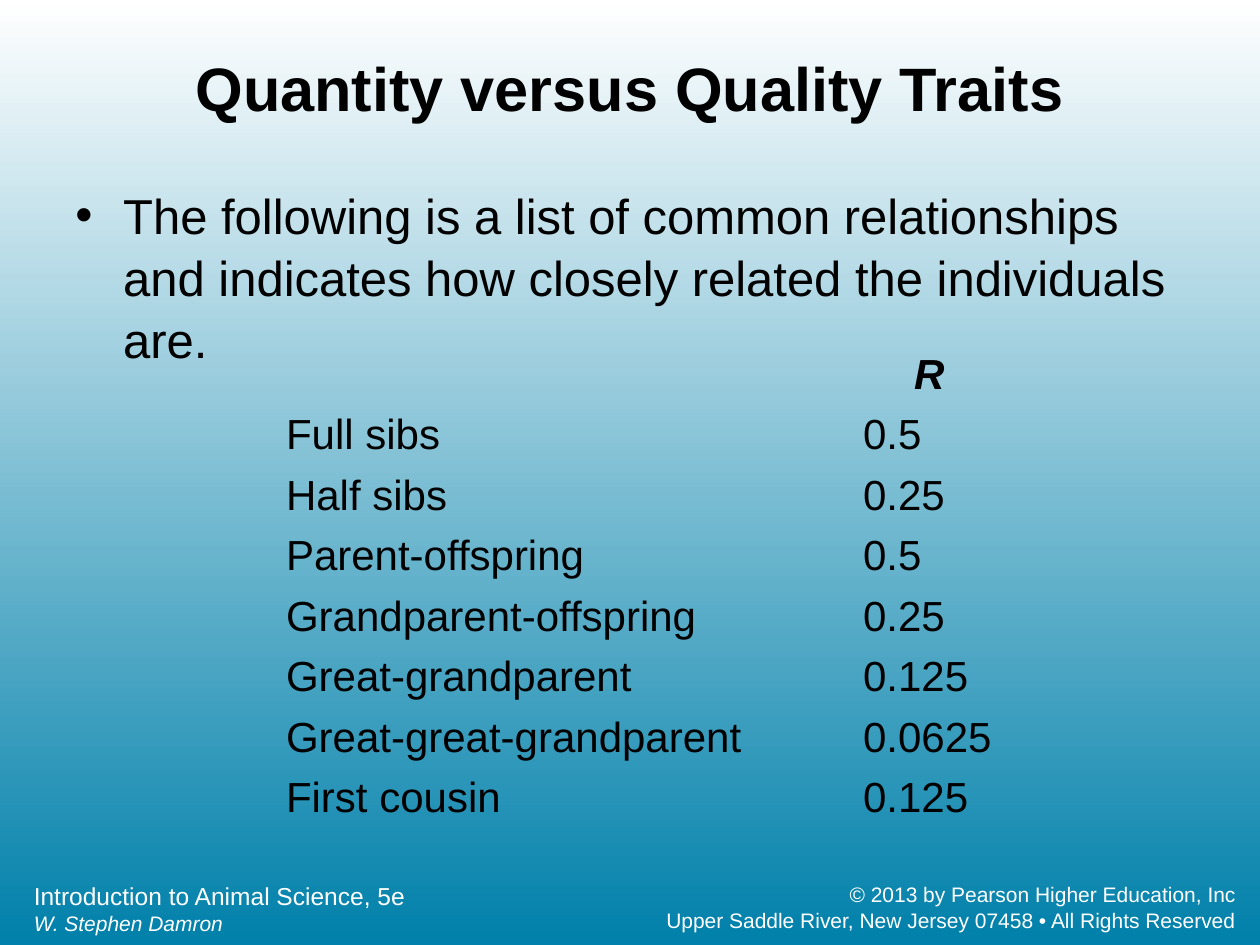
from dataclasses import dataclass

from lxml import etree
from pptx import Presentation
from pptx.dml.color import RGBColor
from pptx.enum.text import MSO_ANCHOR, PP_ALIGN
from pptx.oxml.ns import qn
from pptx.util import Inches, Pt

LEFT, CENTER, RIGHT = PP_ALIGN.LEFT, PP_ALIGN.CENTER, PP_ALIGN.RIGHT
TOP, MIDDLE = MSO_ANCHOR.TOP, MSO_ANCHOR.MIDDLE
BLANK_LAYOUT = 6


@dataclass(frozen=True)
class Theme:
    font: str = "Arial"
    ink: RGBColor = RGBColor(0, 0, 0)
    light: RGBColor = RGBColor(255, 255, 255)
    deep: RGBColor = RGBColor(0x00, 0x80, 0xAA)
    title: int = 35
    body: int = 28
    table: int = 24
    book: int = 14
    small: int = 12


THEME = Theme()
RELATIONSHIPS = [
    ("Full sibs", "0.5"),
    ("Half sibs", "0.25"),
    ("Parent-offspring", "0.5"),
    ("Grandparent-offspring", "0.25"),
    ("Great-grandparent", "0.125"),
    ("Great-great-grandparent", "0.0625"),
    ("First cousin", "0.125"),
]


def paint_background(slide):
    fill = slide.background.fill
    fill.gradient()
    fill.gradient_angle = 270
    for stop, color in zip(fill.gradient_stops, (THEME.light, THEME.deep)):
        stop.color.rgb = color


def add_run(paragraph, text, size, color=THEME.ink, bold=False, italic=False):
    run = paragraph.add_run()
    run.text = text
    font = run.font
    font.name, font.size = THEME.font, Pt(size)
    font.bold, font.italic = bold, italic
    font.color.rgb = color


def add_text_frame(slide, left, top, width, height, anchor=TOP):
    box = slide.shapes.add_textbox(
        Inches(left), Inches(top), Inches(width), Inches(height))
    frame = box.text_frame
    frame.word_wrap = True
    frame.vertical_anchor = anchor
    return frame


def add_title(slide, text):
    frame = add_text_frame(slide, 0.5, 0.3, 9, 0.78, MIDDLE)
    paragraph = frame.paragraphs[0]
    paragraph.alignment = CENTER
    add_run(paragraph, text, THEME.title, bold=True)


def add_bullet(slide, text):
    paragraph = add_text_frame(slide, 0.5, 1.4, 9, 5.41).paragraphs[0]
    paragraph.line_spacing = 1.05
    properties = paragraph._p.get_or_add_pPr()
    properties.set("marL", str(Inches(0.38)))
    properties.set("indent", str(-Inches(0.38)))
    etree.SubElement(properties, qn("a:buFont"), typeface=THEME.font)
    etree.SubElement(properties, qn("a:buChar"), char="•")
    add_run(paragraph, text, THEME.body)


def fill_cell(cell, text, alignment=LEFT, bold=False, italic=False):
    cell.fill.background()
    cell.margin_top = cell.margin_bottom = Inches(0.04)
    paragraph = cell.text_frame.paragraphs[0]
    paragraph.alignment = alignment
    if text:
        add_run(paragraph, text, THEME.table, bold=bold, italic=italic)
    else:
        paragraph.font.size = Pt(THEME.table)


def add_relationship_table(slide):
    row_count, row_height = len(RELATIONSHIPS) + 1, 0.47
    table = slide.shapes.add_table(
        row_count, 2, Inches(2.17), Inches(2.75),
        Inches(5.83), Inches(row_count * row_height)).table
    table.first_row = table.horz_banding = False
    # The "No Style, No Grid" table style
    table._tbl.tblPr.find(qn("a:tableStyleId")).text = (
        "{2D5ABB26-0587-4C30-8999-92F81FD0307C}")
    for column, width in zip(table.columns, (4.58, 1.25)):
        column.width = Inches(width)
    for row in table.rows:
        row.height = Inches(row_height)

    fill_cell(table.cell(0, 0), "")
    fill_cell(table.cell(0, 1), "R", CENTER, bold=True, italic=True)
    for row_index, values in enumerate(RELATIONSHIPS, start=1):
        for column_index, value in enumerate(values):
            fill_cell(table.cell(row_index, column_index), value)


def add_footers(slide):
    frame = add_text_frame(slide, 0.17, 6.94, 4.5, 0.53)
    add_run(frame.paragraphs[0], "Introduction to Animal Science, 5e",
            THEME.book, THEME.light)
    add_run(frame.add_paragraph(), "W. Stephen Damron",
            THEME.small, THEME.light, italic=True)

    rights = add_text_frame(slide, 5.05, 6.95, 4.86, 0.5).paragraphs[0]
    rights.alignment = RIGHT
    add_run(rights, "© 2013 by Pearson Higher Education, Inc",
            THEME.small, THEME.light)
    rights.add_line_break()
    add_run(rights, "Upper Saddle River, New Jersey 07458 • All Rights Reserved",
            THEME.small, THEME.light)


def main():
    presentation = Presentation()
    presentation.slide_width = Inches(10)
    presentation.slide_height = Inches(7.5)
    slide = presentation.slides.add_slide(
        presentation.slide_layouts[BLANK_LAYOUT])
    paint_background(slide)
    add_footers(slide)
    add_title(slide, "Quantity versus Quality Traits")
    add_bullet(slide, "The following is a list of common relationships and "
                      "indicates how closely related the individuals are.")
    add_relationship_table(slide)
    presentation.save("out.pptx")


if __name__ == "__main__":
    main()
